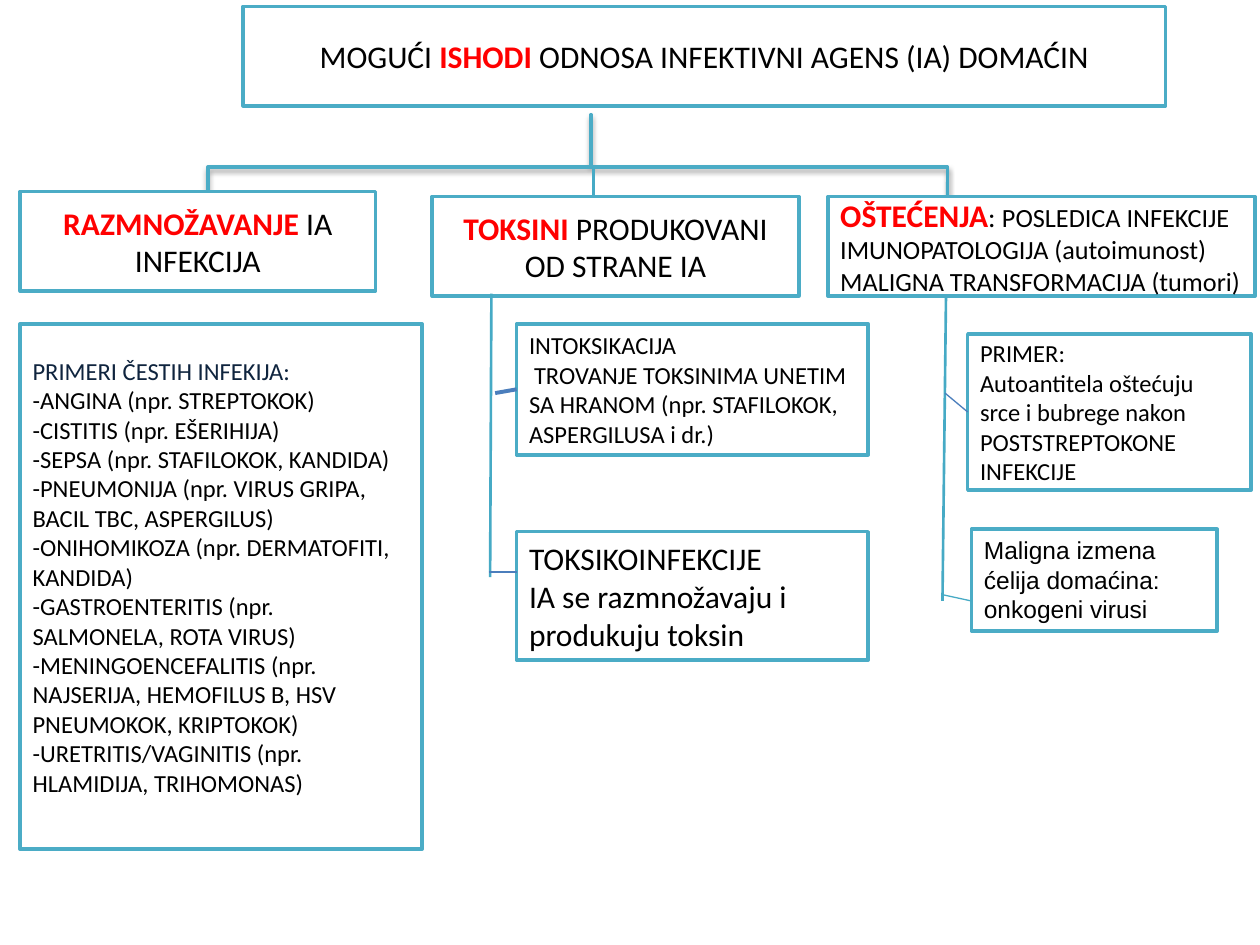
import pptx
import pptx.util
import pptx.dml.color
import pptx.enum.shapes
import pptx.enum.text
import lxml.etree
from pptx.util import Inches, Pt

HUES = {"edge": "4BACC6", "spine": "46AAC5", "link": "4B7EBC", "red": "FF0000",
        "navy": "0F243E", "ink": "000000", "paper": "FFFFFF"}
SHAPE = pptx.enum.shapes.MSO_SHAPE
ALIGN = pptx.enum.text.PP_ALIGN
ANCHOR = pptx.enum.text.MSO_ANCHOR
NS = "http://schemas.openxmlformats.org/drawingml/2006/main"
ILLS = ["-ANGINA (npr. STREPTOKOK)", "-CISTITIS (npr. EŠERIHIJA)",
        "-SEPSA (npr. STAFILOKOK, KANDIDA)",
        "-PNEUMONIJA (npr. VIRUS GRIPA, BACIL TBC, ASPERGILUS)",
        "-ONIHOMIKOZA (npr. DERMATOFITI, KANDIDA)",
        "-GASTROENTERITIS (npr. SALMONELA, ROTA VIRUS)",
        "-MENINGOENCEFALITIS (npr. NAJSERIJA, HEMOFILUS B, HSV PNEUMOKOK, KRIPTOKOK)",
        "-URETRITIS/VAGINITIS (npr. HLAMIDIJA, TRIHOMONAS)"]


def tint(name):
    """Return the named colour."""
    return pptx.dml.color.RGBColor.from_string(HUES[name])


def add_box(slide, x, y, w, h, paras, size=18, face="Calibri", align=ALIGN.LEFT):
    """Add a framed box; each run is text, or (text, colour, bold, size)."""
    box = slide.shapes.add_shape(SHAPE.RECTANGLE, Inches(x), Inches(y), Inches(w), Inches(h))
    box.shadow.inherit = False
    box.fill.solid()
    box.fill.fore_color.rgb = tint("paper")
    box.line.color.rgb = tint("edge")
    box.line.width = Pt(2)
    frame = box.text_frame
    frame.word_wrap = True
    frame.vertical_anchor = ANCHOR.MIDDLE
    for i, runs in enumerate(paras):
        para = frame.paragraphs[0] if i == 0 else frame.add_paragraph()
        para.alignment = align
        for item in [runs] if isinstance(runs, str) else runs:
            text, hue, bold, pts = (item, "ink", False, size) if isinstance(item, str) else item
            run = para.add_run()
            run.text = text
            run.font.name = face
            run.font.size = Pt(pts)
            run.font.bold = bold
            run.font.color.rgb = tint(hue)
    return box


def add_line(slide, start, end, hue="spine", width=1.5, box=None):
    """Draw a straight line, joined to the left side of a box if given."""
    line = slide.shapes.add_connector(pptx.enum.shapes.MSO_CONNECTOR.STRAIGHT,
                                      *(Inches(v) for v in (*start, *end)))
    line.line.color.rgb = tint(hue)
    line.line.width = Pt(width)
    lxml.etree.SubElement(line._element.spPr, f"{{{NS}}}effectLst")
    if box is not None:
        line.end_connect(box, 1)


def add_brace(slide, x, y, w, h):
    """Add a shadowed square brace that opens downwards."""
    brace = slide.shapes.add_shape(SHAPE.RIGHT_BRACE, Inches(x + (w - h) / 2),
                                   Inches(y + (h - w) / 2), Inches(h), Inches(w))
    brace.rotation = 270
    brace.adjustments[0] = 0
    brace.adjustments[1] = 0.518
    brace.fill.background()
    brace.line.color.rgb = tint("edge")
    brace.line.width = Pt(2)
    brace.shadow.inherit = False
    glow = brace._element.spPr.find(f"{{{NS}}}effectLst")
    glow.append(lxml.etree.fromstring(
        f'<a:outerShdw xmlns:a="{NS}" blurRad="{Pt(3.1)}" dist="{Pt(1.6)}" dir="5400000" '
        'rotWithShape="0"><a:srgbClr val="000000"><a:alpha val="38000"/></a:srgbClr>'
        '</a:outerShdw>'))


def add_head(slide, x, y, w, h):
    """Add the title box and the brace under it."""
    add_brace(slide, x - 0.28, y + 0.86, 5.87, 0.83)
    add_box(slide, x, y, w, h, [["MOGUĆI ", ("ISHODI ", "red", True, 18),
                                "ODNOSA INFEKTIVNI AGENS (IA) DOMAĆIN"]], align=ALIGN.CENTER)


def add_growth(slide, x, y, w, h):
    """Add the infection branch with its list of examples."""
    add_box(slide, x, y, 2.82, 0.79, [[("RAZMNOŽAVANJE ", "red", True, 18), "IA INFEKCIJA"]],
            align=ALIGN.CENTER)
    top = [("PRIMERI ČESTIH INFEKIJA:", "navy", False, 14)]
    box = add_box(slide, x, y + 1.05, w, h - 1.05, [top, *ILLS], 14)
    box.text_frame.margin_bottom = Inches(0.21)


def add_toxin(slide, x, y, w, h):
    """Add the toxin branch with its two kinds."""
    add_box(slide, x, y, 2.91, 0.79, [[("TOKSINI ", "red", True, 18), "PRODUKOVANI OD STRANE IA"]],
            align=ALIGN.CENTER)
    left, wide = x + 0.67, w - 0.67
    food = add_box(slide, left, y + 1.01, wide, 1.04,
                   ["INTOKSIKACIJA",
                    "TROVANJE TOKSINIMA UNETIM SA HRANOM (npr. STAFILOKOK, ASPERGILUSA i dr.)"], 14)
    food.text_frame.paragraphs[1]._p.get_or_add_pPr().set("indent", str(Inches(0.04)))
    add_box(slide, left, y + h - 1.02, wide, 1.02,
            ["TOKSIKOINFEKCIJE", "IA se razmnožavaju i produkuju toksin"])
    add_line(slide, (x + 0.47, y + 0.77), (x + 0.46, y + 3.02))
    add_line(slide, (x + 0.5, y + 1.56), (left, y + 1.53), "link", 2.25, food)
    add_line(slide, (x + 0.45, y + 2.98), (left, y + 2.98), "link")
    add_line(slide, (x + 1.28, y - 0.22), (x + 1.28, y - 0.01))


def add_harm(slide, x, y, w, h):
    """Add the damage branch with its two examples."""
    add_line(slide, (x + 0.95, y - 0.23), (x + 0.91, y + 3.21))
    add_box(slide, x, y, w, 0.79,
            [[("OŠTEĆENJA", "red", True, 18), (": ", "ink", False, 16),
              "POSLEDICA INFEKCIJE IMUNOPATOLOGIJA (autoimunost)"],
             "MALIGNA TRANSFORMACIJA (tumori)"], 15)
    auto = add_box(slide, x + 1.11, y + 1.09, 2.25, 1.24,
                   ["PRIMER:", "Autoantitela oštećuju srce i bubrege nakon "
                    "POSTSTREPTOKONE INFEKCIJE"], 14)
    tumor = add_box(slide, x + 1.14, y + h - 0.81, 1.95, 0.81,
                    ["Maligna izmena ćelija domaćina: onkogeni virusi"], 14, "Arial")
    tumor.text_frame.vertical_anchor = ANCHOR.TOP
    add_line(slide, (x + 0.93, y + 1.56), (x + 1.11, y + 1.71), "link", 0.75, auto)
    add_line(slide, (x + 0.91, y + 3.16), (x + 1.14, y + 3.21), width=0.75)


def main():
    """Build and save the slide."""
    deck = pptx.Presentation()
    deck.slide_width, deck.slide_height = Inches(10), Inches(7.5)
    slide = deck.slides.add_slide(deck.slide_layouts[6])
    add_head(slide, 1.93, 0.05, 7.32, 0.79)
    add_growth(slide, 0.16, 1.52, 3.19, 5.22)
    add_toxin(slide, 3.43, 1.56, 3.46, 3.68)
    add_harm(slide, 6.57, 1.56, 3.39, 3.45)
    deck.save("out.pptx")


if __name__ == "__main__":
    main()
